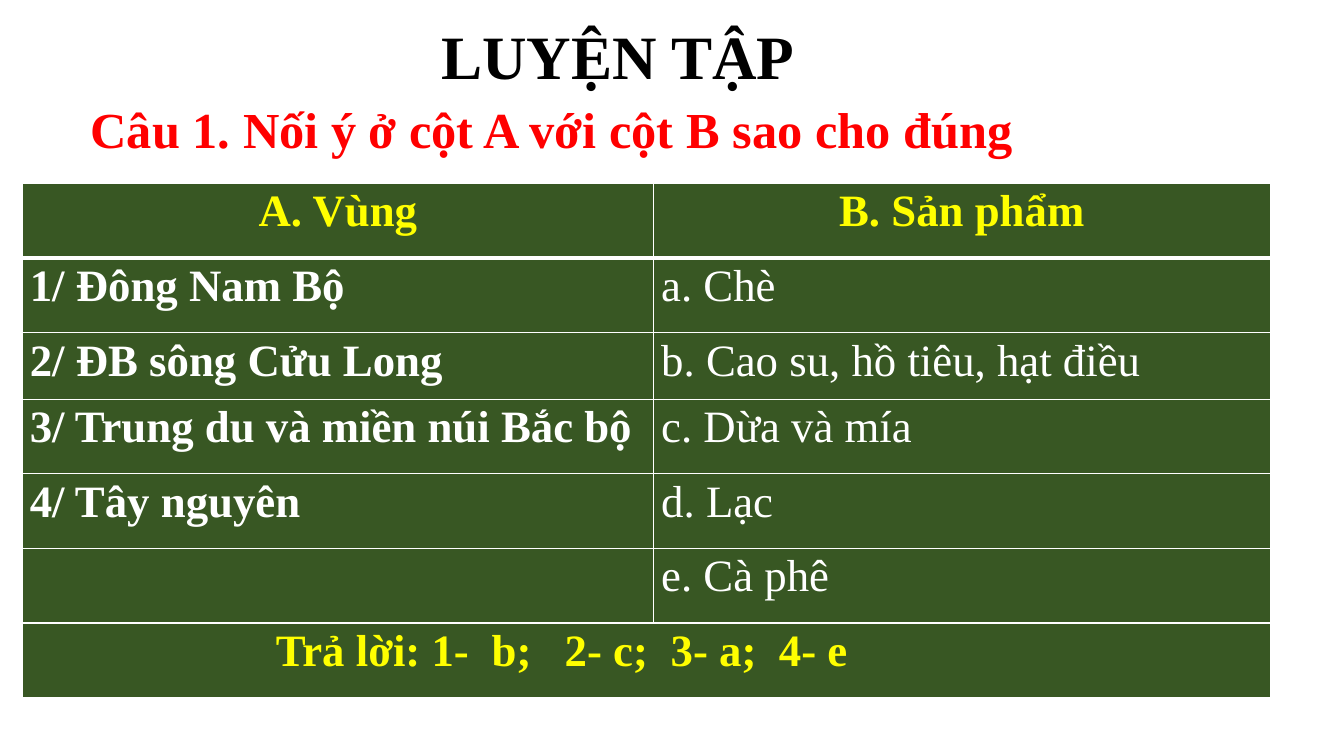
from dataclasses import dataclass

from lxml.etree import SubElement
from pptx import Presentation
from pptx.dml.color import RGBColor
from pptx.enum.text import MSO_ANCHOR, MSO_AUTO_SIZE, PP_ALIGN
from pptx.oxml import parse_xml
from pptx.oxml.ns import nsdecls, qn
from pptx.util import Cm, Pt


@dataclass(frozen=True)
class Theme:
    font: str = "Times New Roman"
    black: str = "000000"
    red: str = "FF0000"
    white: str = "FFFFFF"
    yellow: str = "FFFF00"
    green: str = "385723"
    title: int = 44
    question: int = 36
    cell: int = 32
    thin: int = 1
    thick: int = 3


THEME = Theme()
HEADER = ("A. Vùng", "B. Sản phẩm")
PAIRS = [
    ("1/ Đông Nam Bộ", "a. Chè"),
    ("2/ ĐB sông Cửu Long", "b. Cao su, hồ tiêu, hạt điều"),
    ("3/ Trung du và miền núi Bắc bộ", "c. Dừa và mía"),
    ("4/ Tây nguyên", "d. Lạc"),
    ("", "e. Cà phê"),
]
ANSWER = "Trả lời: 1-\tb;\t2- c;\t3- a;\t4- e"
ANSWER_TABS = (5.44, 7.28, 9.95, 12.68)
ANSWER_INDENT = 6.2
COL_SHARES = (0.506, 0.494)
ROW_HEIGHTS = (1.88, 1.88, 1.68, 1.88, 1.88, 1.88, 1.88)


def style_runs(p, size, color, bold=True):
    for r in p.runs:
        r.font.name = THEME.font
        r.font.size = Pt(size)
        r.font.bold = bold
        r.font.color.rgb = RGBColor.from_string(color)


def add_heading(sp, text, box, size, color):
    sp.left, sp.top, sp.width, sp.height = (Cm(v) for v in box)
    tf = sp.text_frame
    tf.word_wrap = True
    tf.auto_size = MSO_AUTO_SIZE.SHAPE_TO_FIT_TEXT
    tf.vertical_anchor = MSO_ANCHOR.TOP
    tf.text = text
    p = tf.paragraphs[0]
    p.alignment = PP_ALIGN.LEFT
    style_runs(p, size, color)


def set_borders(cell, top, bottom):
    widths = {"lnL": THEME.thin, "lnR": THEME.thin, "lnT": top, "lnB": bottom}
    tcPr = cell._tc.get_or_add_tcPr()
    for i, (tag, width) in enumerate(widths.items()):
        tcPr.insert(i, parse_xml(
            f'<a:{tag} {nsdecls("a")} w="{Pt(width)}"><a:solidFill>'
            f'<a:srgbClr val="{THEME.white}"/></a:solidFill></a:{tag}>'))


def fill_cell(cell, text, color, bold, align):
    cell.margin_left = cell.margin_right = Cm(0.19)
    cell.margin_top = cell.margin_bottom = 0
    cell.fill.solid()
    cell.fill.fore_color.rgb = RGBColor.from_string(THEME.green)
    if text:
        cell.text = text
        p = cell.text_frame.paragraphs[0]
        p.alignment = align
        p.line_spacing = 1.07
        style_runs(p, THEME.cell, color, bold)


def add_tabs(p, stops):
    tabs = SubElement(p._p.get_or_add_pPr(), qn("a:tabLst"))
    for stop in stops:
        SubElement(tabs, qn("a:tab"), pos=str(Cm(stop)), algn="l")


def add_matching_table(s, left, top, width):
    rows = [HEADER, *PAIRS, (ANSWER, "")]
    frame = s.shapes.add_table(len(rows), 2, Cm(left), Cm(top), Cm(width), Cm(sum(ROW_HEIGHTS)))
    table = frame.table
    table.first_row = table.horz_banding = False
    for col, share in zip(table.columns, COL_SHARES):
        col.width = Cm(width * share)
    last = len(rows) - 1
    for i, (row, height) in enumerate(zip(rows, ROW_HEIGHTS)):
        table.rows[i].height = Cm(height)
        color = THEME.yellow if i in (0, last) else THEME.white
        align = PP_ALIGN.CENTER if i == 0 else PP_ALIGN.LEFT if i == last else PP_ALIGN.JUSTIFY
        for j, text in enumerate(row):
            cell = table.cell(i, j)
            fill_cell(cell, text, color, i == 0 or j == 0, align)
            set_borders(cell, THEME.thick if i == 1 else THEME.thin,
                        THEME.thick if i == 0 else THEME.thin)
    answer = table.cell(last, 0)
    answer.merge(table.cell(last, 1))
    answer.margin_left += Cm(ANSWER_INDENT)
    add_tabs(answer.text_frame.paragraphs[0], ANSWER_TABS)


def build_exercise_slide(prs):
    s = prs.slides.add_slide(prs.slide_layouts[5])
    add_heading(s.shapes.title, "LUYỆN TẬP", (10.87, 0.33, 12.98, 2.13), THEME.title, THEME.black)
    add_matching_table(s, 0.56, 4.62, 31.45)
    question = s.shapes.add_textbox(0, 0, 0, 0)
    add_heading(question, "Câu 1. Nối ý ở cột A với cột B sao cho đúng",
                (2.03, 2.36, 27.05, 1.8), THEME.question, THEME.red)


def main():
    prs = Presentation()
    prs.slide_width, prs.slide_height = Cm(33.87), Cm(19.05)
    build_exercise_slide(prs)
    prs.save("out.pptx")


if __name__ == "__main__":
    main()
